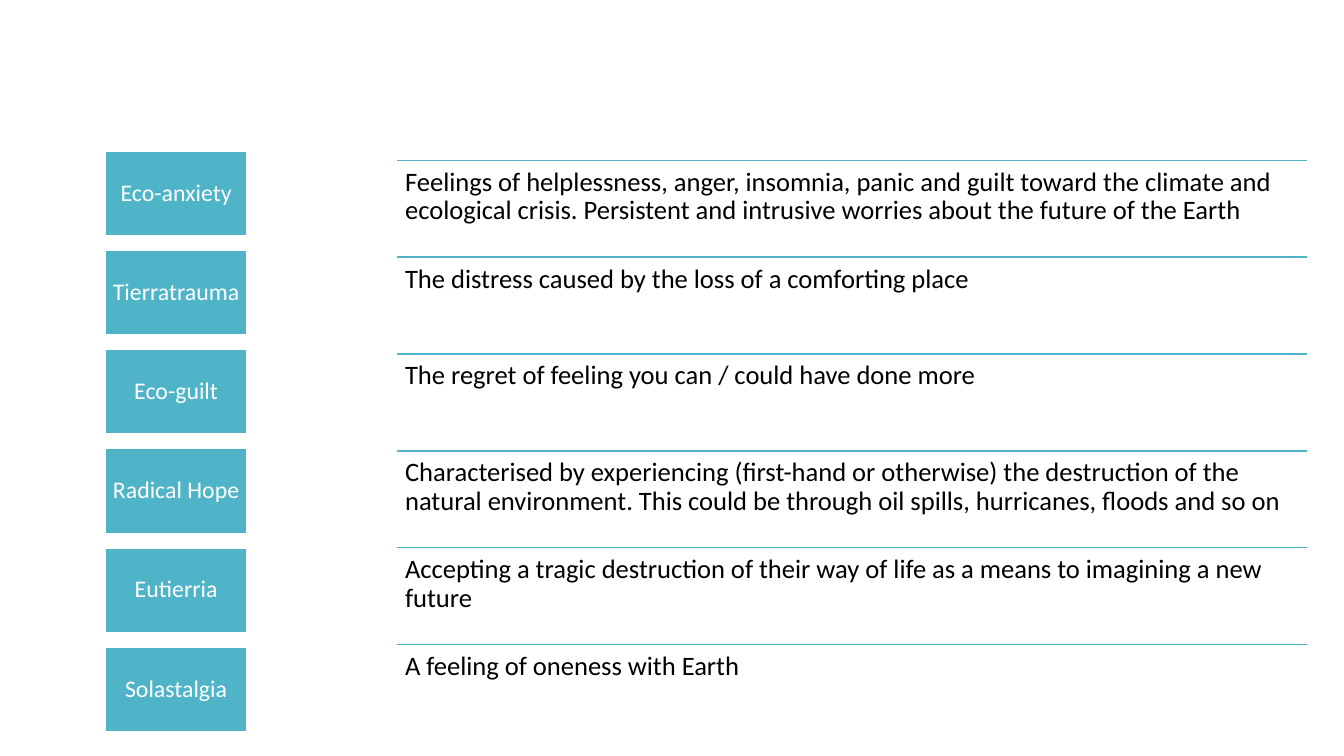
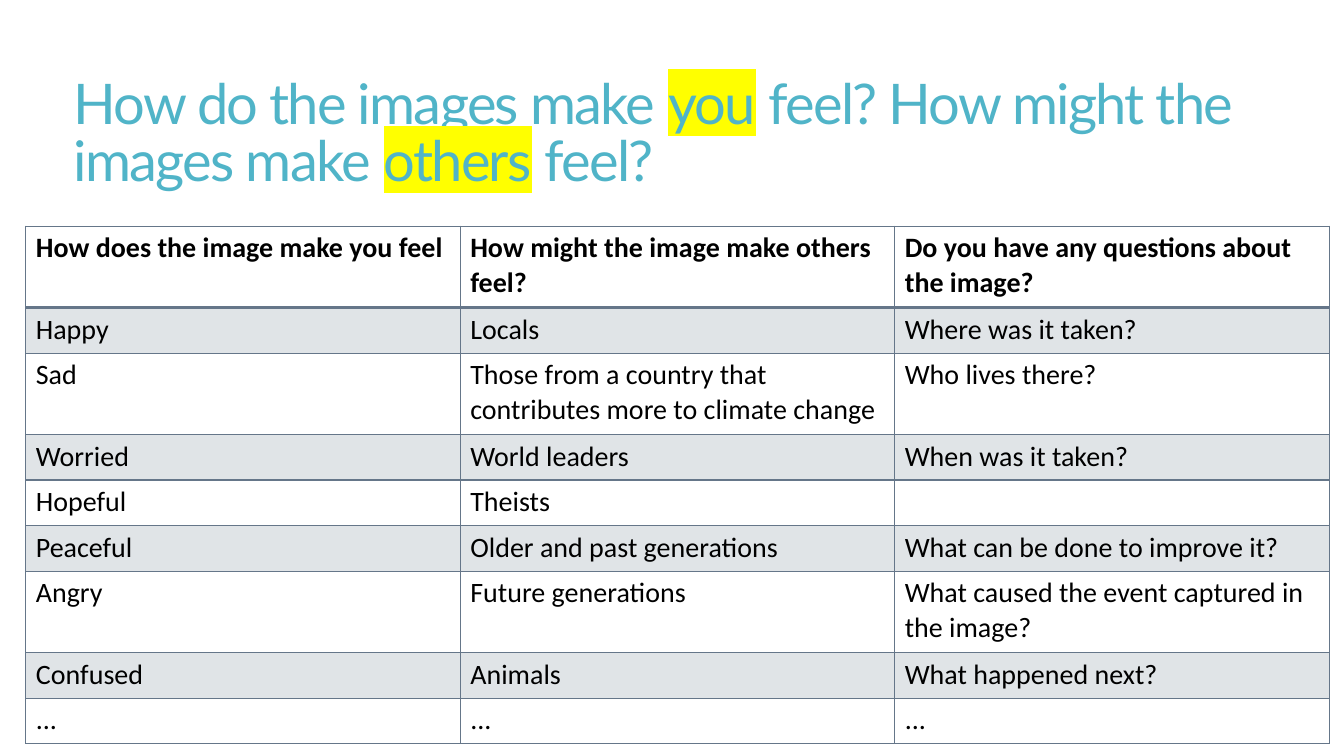
from lxml import etree
from pptx import Presentation
from pptx.dml.color import RGBColor
from pptx.enum import shapes, text
from pptx.oxml import ns
from pptx.util import Cm, Pt

COLOURS = {"teal": "50B4C8", "white": "FFFFFF", "black": "000000",
           "slate": "657689", "band": "E0E4E7", "marker": "FFFF00"}
TERM = {"name": "Calibri", "size": Pt(17)}
DEFINITION = {"name": "Calibri", "size": Pt(19)}
TITLE = {"name": "Lato", "size": Pt(40)}
CELL = {"name": "Calibri", "size": Pt(20), "bold": False}
HEADER = {**CELL, "bold": True}


def add_span(para, words, style, colour):
    span = para.add_run()
    span.text = words
    span.font.color.rgb = RGBColor.from_string(COLOURS[colour])
    for key, value in style.items():
        setattr(span.font, key, value)
    return span


def set_frame(frame, margin, anchor):
    frame.word_wrap = True
    frame.vertical_anchor = anchor
    for side in ("left", "right", "top", "bottom"):
        setattr(frame, f"margin_{side}", margin)
    para = frame.paragraphs[0]
    para.line_spacing = 0.9
    return para


deck = Presentation()
deck.slide_width, deck.slide_height = Cm(33.87), Cm(19.05)
TITLE_ONLY, BLANK = deck.slide_layouts[5], deck.slide_layouts[6]

# Slide 1: terms on the left, definitions on the right
page = deck.slides.add_slide(BLANK)
terms = ["Eco-anxiety", "Tierratrauma", "Eco-guilt",
         "Radical Hope", "Eutierria", "Solastalgia"]
definitions = [
    "Feelings of helplessness, anger, insomnia, panic and guilt toward the climate and "
    "ecological crisis. Persistent and intrusive worries about the future of the Earth",
    "The distress caused by the loss of a comforting place",
    "The regret of feeling you can / could have done more",
    "Characterised by experiencing (first-hand or otherwise) the destruction of the "
    "natural environment. This could be through oil spills, hurricanes, floods and so on",
    "Accepting a tragic destruction of their way of life as a means to imagining a new future",
    "A feeling of oneness with Earth",
]

# Term boxes
for index, term in enumerate(terms):
    box = page.shapes.add_shape(shapes.MSO_SHAPE.RECTANGLE, Cm(2.65),
                                Cm(3.81 + 2.5 * index), Cm(3.58), Cm(2.13))
    box.shadow.inherit = False
    box.fill.solid()
    box.fill.fore_color.rgb = RGBColor.from_string(COLOURS["teal"])
    box.line.color.rgb = RGBColor.from_string(COLOURS["white"])
    box.line.width = Pt(1)
    para = set_frame(box.text_frame, Cm(0.16), text.MSO_ANCHOR.MIDDLE)
    para.alignment = text.PP_ALIGN.CENTER
    add_span(para, term, TERM, "white")

# Ruled definitions
left, width, step = 10.01, 22.93, 2.44
for index, definition in enumerate(definitions):
    top = Cm(4.04 + step * index)
    rule = page.shapes.add_connector(shapes.MSO_CONNECTOR.STRAIGHT,
                                     Cm(left), top, Cm(left + width), top)
    rule.line.color.rgb = RGBColor.from_string(COLOURS["teal"])
    rule.line.width = Pt(1)
    etree.SubElement(rule.line._get_or_add_ln().getparent(), ns.qn("a:effectLst"))
    box = page.shapes.add_textbox(Cm(left), top, Cm(width), Cm(step))
    para = set_frame(box.text_frame, Cm(0.2), text.MSO_ANCHOR.TOP)
    add_span(para, definition, DEFINITION, "black")

# Slide 2: title with marked words
page = deck.slides.add_slide(TITLE_ONLY)
title = page.shapes.title
title.left, title.top, title.width, title.height = Cm(1.6), Cm(1.12), Cm(29.92), Cm(4.6)
title.text_frame.vertical_anchor = text.MSO_ANCHOR.MIDDLE
para = title.text_frame.paragraphs[0]
para.alignment = text.PP_ALIGN.LEFT
para.line_spacing = 0.85
title_parts = [("How do the images make ", False), ("you", True),
               (" feel? How might the images make ", False), ("others", True),
               (" feel?", False)]
for words, marked in title_parts:
    span = add_span(para, words, TITLE, "teal")
    props = span.font._element
    props.set("spc", "-120")
    if marked:
        highlight = etree.Element(ns.qn("a:highlight"))
        etree.SubElement(highlight, ns.qn("a:srgbClr"), val=COLOURS["marker"])
        props.find(ns.qn("a:solidFill")).addnext(highlight)

# Table of feelings and questions
rows = [
    ("How does the image make you feel", "How might the image make others feel?",
     "Do you have any questions about the image?"),
    ("Happy", "Locals", "Where was it taken?"),
    ("Sad", "Those from a country that contributes more to climate change",
     "Who lives there?"),
    ("Worried", "World leaders", "When was it taken?"),
    ("Hopeful", "Theists", ""),
    ("Peaceful", "Older and past generations", "What can be done to improve it?"),
    ("Angry", "Future generations", "What caused the event captured in the image?"),
    ("Confused", "Animals", "What happened next?"),
    ("...", "...", "..."),
]
two_line_rows = {0, 2, 6}
heights = [Cm(2.05 if index in two_line_rows else 1.15) for index in range(len(rows))]
table = page.shapes.add_table(len(rows), 3, Cm(0.65), Cm(5.7),
                              Cm(32.85), sum(heights)).table
table.first_row = table.horz_banding = False
for column in table.columns:
    column.width = Cm(10.95)

for index, row in enumerate(rows):
    table.rows[index].height = heights[index]
    for cell, words in zip(table.rows[index].cells, row):
        cell.fill.solid()
        cell.fill.fore_color.rgb = RGBColor.from_string(
            COLOURS["band" if index % 2 else "white"])
        para = cell.text_frame.paragraphs[0]
        if words:
            add_span(para, words, CELL if index else HEADER, "black")
        else:
            para.font.size = CELL["size"]
        # Cell borders, thicker under the header
        props = cell._tc.get_or_add_tcPr()
        for place, side in enumerate("LRTB"):
            thick = (index, side) in {(0, "B"), (1, "T")}
            border = etree.Element(ns.qn(f"a:ln{side}"), w=str(Pt(2 if thick else 1)))
            fill = etree.SubElement(border, ns.qn("a:solidFill"))
            etree.SubElement(fill, ns.qn("a:srgbClr"), val=COLOURS["slate"])
            props.insert(place, border)

deck.save("out.pptx")
